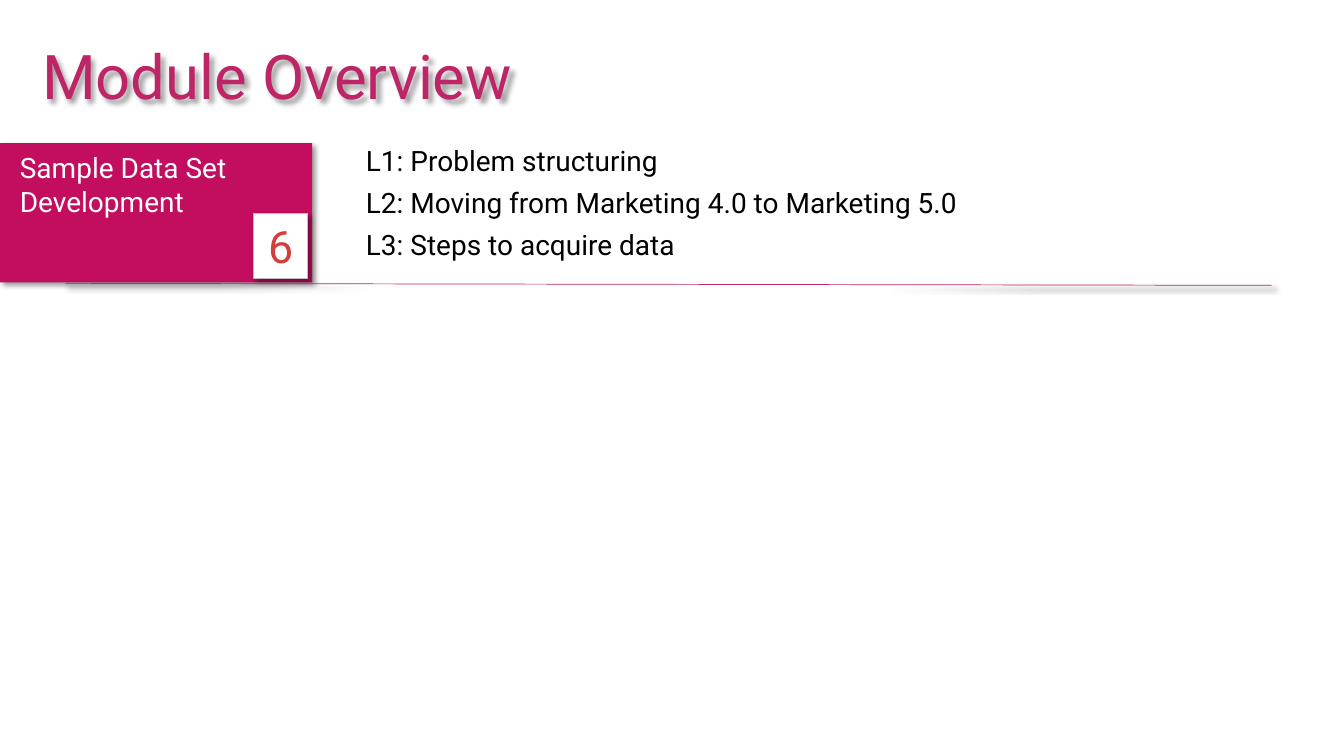
from lxml import etree
from pptx import Presentation
from pptx import util as u
from pptx.dml.color import RGBColor
from pptx.enum import shapes, text
from pptx.oxml import ns

COLORS = {
    "title": "BE2566",
    "panel": "C30E60",
    "number": "D23E38",
    "border": "BFBFBF",
    "white": "FFFFFF",
    "black": "000000",
}
FONT = "Roboto"


def rgb(name):
    return RGBColor.from_string(COLORS[name])


def place(left, top, width, height):
    return [u.Cm(value) for value in (left, top, width, height)]


def add_shadow(item):
    """Give an already styled element a soft shadow to the lower right."""
    effects = etree.SubElement(item._element.spPr, ns.qn("a:effectLst"))
    shadow = etree.SubElement(
        effects, ns.qn("a:outerShdw"), blurRad=str(u.Pt(4)), dist=str(u.Pt(3)),
        dir="2700000", algn="tl", rotWithShape="0")
    tint = etree.SubElement(shadow, ns.qn("a:srgbClr"), val=COLORS["black"])
    etree.SubElement(tint, ns.qn("a:alpha"), val="40000")


def write(frame, lines, size, color, align=text.PP_ALIGN.LEFT, after=0):
    frame.word_wrap = True
    for index, line in enumerate(lines):
        paragraph = frame.paragraphs[0] if index == 0 else frame.add_paragraph()
        paragraph.alignment = align
        paragraph.space_after = u.Pt(after)
        run = paragraph.add_run()
        run.text = line
        run.font.name = FONT
        run.font.size = u.Pt(size)
        run.font.color.rgb = rgb(color)


def add_text(slide, box, lines, size, color, after=0):
    label = slide.shapes.add_textbox(*place(*box))
    write(label.text_frame, lines, size, color, after=after)
    return label


def add_block(slide, box, fill, border=None):
    block = slide.shapes.add_shape(shapes.MSO_SHAPE.RECTANGLE, *place(*box))
    block.fill.solid()
    block.fill.fore_color.rgb = rgb(fill)
    if border:
        block.line.color.rgb = rgb(border)
        block.line.width = u.Pt(0.75)
    else:
        block.line.fill.background()
    add_shadow(block)
    return block


def add_rule(slide, start, end, color):
    rule = slide.shapes.add_connector(
        shapes.MSO_CONNECTOR.STRAIGHT, *place(*start, *end))
    rule.line.color.rgb = rgb(color)
    rule.line.width = u.Pt(0.5)
    add_shadow(rule)


def main():
    deck = Presentation()
    deck.slide_width, deck.slide_height = u.Cm(33.87), u.Cm(19.05)
    slide = deck.slides.add_slide(deck.slide_layouts[6])

    # Title
    title = add_text(slide, (0.81, 0.84, 22.53, 2.13),
                     ["Module Overview"], 44, "title")
    add_shadow(title)

    # Module panel with its number
    add_block(slide, (0, 3.61, 7.87, 3.51), "panel")
    add_text(slide, (0.25, 3.68, 5.87, 2.82),
             ["Sample Data Set Development"], 20, "white")
    badge = add_block(slide, (6.4, 5.38, 1.35, 1.63), "white", "border")
    badge.text_frame.vertical_anchor = text.MSO_ANCHOR.MIDDLE
    write(badge.text_frame, ["6"], 32, "number", text.PP_ALIGN.CENTER)

    # Divider
    add_rule(slide, (1.65, 7.14), (32.05, 7.19), "title")

    # Lessons
    lessons = ["L1: Problem structuring",
               "L2: Moving from Marketing 4.0 to Marketing 5.0",
               "L3: Steps to acquire data"]
    add_text(slide, (8.97, 3.48, 22, 3.25), lessons, 20, "black", after=6)

    deck.save("out.pptx")


if __name__ == "__main__":
    main()
